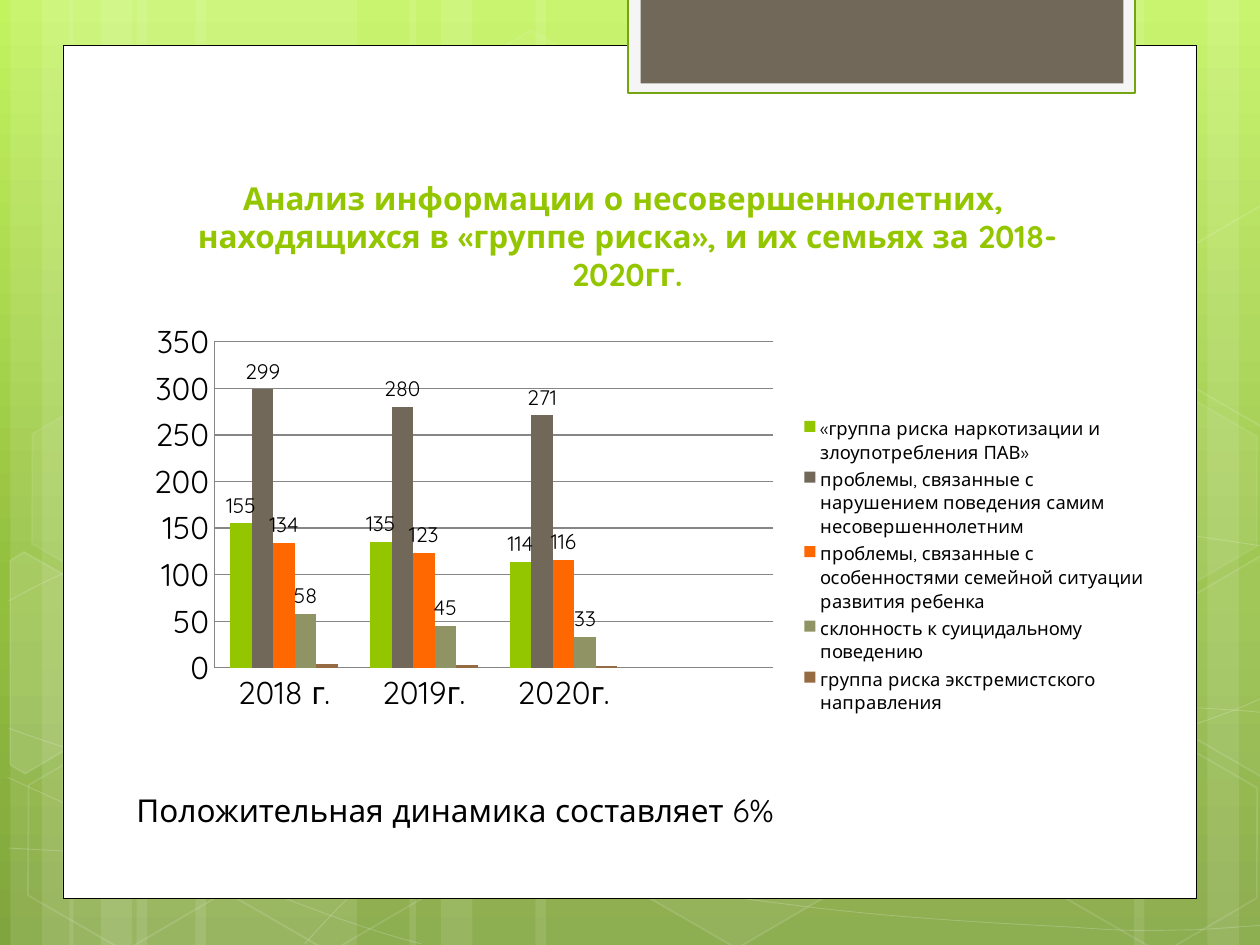
from copy import deepcopy

from lxml import etree
from pptx import Presentation
from pptx.chart.data import CategoryChartData
from pptx.dml.color import RGBColor
from pptx.enum.chart import XL_CHART_TYPE, XL_LABEL_POSITION, XL_LEGEND_POSITION, XL_TICK_MARK
from pptx.enum.shapes import MSO_SHAPE
from pptx.enum.text import MSO_ANCHOR, MSO_AUTO_SIZE, PP_ALIGN
from pptx.oxml import parse_xml
from pptx.oxml.ns import nsdecls, qn
from pptx.util import Pt

RECT, HEXAGON = MSO_SHAPE.RECTANGLE, MSO_SHAPE.HEXAGON
CLUSTERED = XL_CHART_TYPE.COLUMN_CLUSTERED
ABOVE_BAR = XL_LABEL_POSITION.OUTSIDE_END
LEGEND_RIGHT = XL_LEGEND_POSITION.RIGHT
NO_TICK = XL_TICK_MARK.NONE
BOTTOM, TOP = MSO_ANCHOR.BOTTOM, MSO_ANCHOR.TOP
GROW = MSO_AUTO_SIZE.SHAPE_TO_FIT_TEXT
CENTER, LEFT = PP_ALIGN.CENTER, PP_ALIGN.LEFT

COLORS = {
    "white": "FFFFFF", "black": "000000", "lime": "94C600", "taupe": "71685A",
    "orange": "FF6700", "olive": "909465", "brown": "956B43", "grid": "868686",
    "tab": "F5F5F5", "tab_edge": "74A510",
    "bg_top": "C3F35F", "bg_middle": "93BF3F", "bg_bottom": "81A53E",
}

STRIPES = [
    (78, 126), (6, 36), (24, 60), (111.6, 126), (39.6, 36), (57.6, 60),
    (528, 126), (690, 36), (648, 60), (306, 222), (234, 36), (252, 60),
]
WAVES = [
    [(5, 484.6), (43.9, 486.7), (82.8, 488.9), (136.8, 488.2), (190.8, 487.4),
     (257.8, 486), (329.8, 478.8), (401.8, 471.6), (504, 457.9), (570.2, 444.2),
     (635.8, 430.6), (703.4, 409), (725, 396.7)],
    [(5, 343.4), (25.9, 331.9), (46.8, 321.1), (87.1, 310.3), (128.2, 299.5),
     (186.5, 283.7), (249.8, 278.6), (313.9, 273.6), (391.7, 272.9), (470.9, 278.6),
     (550.1, 284.4), (681.8, 306.7), (725, 312.5)],
    [(4.3, 444.2), (91.4, 483.8), (177.8, 523.4), (240.5, 539.3)],
    [(5, 416.2), (27.4, 424.1), (50.4, 432), (92.2, 443.5), (133.9, 454.3),
     (196.6, 472.3), (257, 484.6), (316.8, 496.8), (392.4, 509.8), (452.2, 517),
     (511.9, 524.9), (576, 527.8), (614.2, 529.9), (651.6, 532.8), (661.7, 531.4),
     (680.4, 531.4), (699.1, 530.6), (712.1, 529.2), (725, 528.5)],
    [(174.2, 539.3), (187.2, 524.9), (200.2, 510.5), (217.4, 497.5), (234.7, 484.6),
     (259.2, 470.2), (279.4, 460.1), (299.5, 450), (311.8, 445.7), (338.4, 438.5),
     (364.3, 431.3), (412.6, 421.2), (437.8, 416.2), (463.7, 411.1), (467.3, 411.1),
     (489.6, 409.7), (511.9, 407.5), (547.2, 405.4), (571.7, 404.6), (596.9, 403.9),
     (637.9, 404.6), (637.9, 404.6), (654, 404.6), (670, 404.6), (686.2, 404.6),
     (699.1, 405.4), (711.4, 406.1), (717.8, 406.8), (724.3, 407.5), (722.2, 406.8),
     (724.3, 407.5)],
]
HEXAGONS = [
    (240.5, 25.9, 4, 8), (357.8, 424.1, 6, 12), (7.9, 425.5, 0, 12), (10.1, 224.6, 7, 8),
    (125.3, 426.2, 0, 12), (542.2, 326.2, 10, 12), (600.5, 427, 0, 12), (600.5, 226.1, 7, 8),
]
CUT_HEXAGONS = [
    ([(5.8, 320.4), (13.7, 315.4), (69.1, 347), (68.4, 410.4), (14.4, 442.1), (5.8, 437)], 10),
    ([(666.7, 349.2), (720.7, 317.5), (726.5, 321.1), (726.5, 441.4), (721.4, 444.2),
      (666.7, 412.6)], 4),
    ([(666.7, 149), (720.7, 117.4), (727.2, 121), (726.5, 241.2), (721.4, 244.1),
      (666.7, 212.4)], 0),
]
YEARS = ["2018 г.", "2019г.", "2020г.", ""]
RISK_GROUPS = [
    ("«группа риска наркотизации и злоупотребления ПАВ»", [155, 135, 114, None], "lime"),
    ("проблемы, связанные с нарушением поведения самим несовершеннолетним",
     [299, 280, 271, None], "taupe"),
    ("проблемы, связанные с особенностями семейной ситуации развития ребенка",
     [134, 123, 116, None], "orange"),
    ("склонность к суицидальному поведению", [58, 45, 33, None], "olive"),
    ("группа риска экстремистского направления", [4, 3, 2, None], "brown"),
]


def rgb(name):
    return RGBColor.from_string(COLORS[name])


def apply(target, values):
    for name, value in values.items():
        setattr(target, name, value)


def bend(path):
    segments = path.findall(qn("a:lnTo"))
    for first in range(0, len(segments), 3):
        curve = etree.SubElement(path, qn("a:cubicBezTo"))
        for segment in segments[first:first + 3]:
            curve.append(segment[0])
            path.remove(segment)


def place(element, x, y, w, h, inner=False):
    target = '<c:layoutTarget val="inner"/>' if inner else ""
    modes = "".join(f'<c:{m}Mode val="edge"/>' for m in "xy")
    sizes = "".join(f'<c:{n} val="{v}"/>' for n, v in zip("xywh", (x, y, w, h)))
    layout = parse_xml(f'<c:layout {nsdecls("c")}><c:manualLayout>{target}{modes}{sizes}'
                       "</c:manualLayout></c:layout>")
    for old in element.findall(qn("c:layout")):
        element.remove(old)
    position = element.find(qn("c:legendPos"))
    element.insert(0 if position is None else 1, layout)


class SlideBuilder:
    font = "Quicksand"
    size = 18

    def __init__(self, slide):
        self.slide = slide
        self.shapes = slide.shapes

    def background(self, stops):
        fill = self.slide.background.fill
        fill.gradient()
        fill.gradient_angle = 270
        first = fill.gradient_stops[0]._gs
        first.addnext(deepcopy(first))
        for stop, (color, position) in zip(fill.gradient_stops, stops):
            stop.color.rgb = rgb(color)
            stop.position = position

    def paint(self, shape, fill=None, line=None, width=1, fill_alpha=100, line_alpha=100):
        shape.shadow.inherit = False
        for part, color, alpha, path in (
                (shape.fill, fill, fill_alpha, "./p:spPr/a:solidFill/a:srgbClr"),
                (shape.line.fill, line, line_alpha, "./p:spPr/a:ln/a:solidFill/a:srgbClr")):
            if not color or not alpha:
                part.background()
                continue
            part.solid()
            part.fore_color.rgb = rgb(color)
            if alpha < 100:
                node = shape._element.xpath(path)[0]
                etree.SubElement(node, qn("a:alpha")).set("val", str(alpha * 1000))
        if line:
            shape.line.width = Pt(width)

    def preset(self, kind, box, rotation=0, **paint):
        shape = self.shapes.add_shape(kind, *map(Pt, box))
        shape.rotation = rotation
        if kind == HEXAGON:
            shape.adjustments[0] = 0.285
        self.paint(shape, **paint)

    def outline(self, points, curved=False, **paint):
        start, *rest = [(Pt(x), Pt(y)) for x, y in points]
        builder = self.shapes.build_freeform(*start)
        builder.add_line_segments(rest, close=not curved)
        shape = builder.convert_to_shape()
        if curved:
            bend(shape._element.xpath(".//a:path")[0])
        self.paint(shape, **paint)

    def text(self, box, words, color="black", bold=False, frame=None, paragraph=None):
        text_frame = self.shapes.add_textbox(*map(Pt, box)).text_frame
        apply(text_frame, frame or {})
        line = text_frame.paragraphs[0]
        line.text = words
        apply(line, paragraph or {})
        for run in line.runs:
            apply(run.font, {"name": self.font, "size": Pt(self.size), "bold": bold})
            run.font.color.rgb = rgb(color)

    def column_chart(self, box, categories, groups):
        data = CategoryChartData()
        data.categories = categories
        for name, values, _ in groups:
            data.add_series(name, values)
        chart = self.shapes.add_chart(CLUSTERED, *map(Pt, box), data).chart
        apply(chart, {"has_title": False, "has_legend": True})
        apply(chart.font, {"name": self.font, "size": Pt(self.size)})
        chart.font.color.rgb = rgb("black")
        apply(chart.legend, {"position": LEGEND_RIGHT, "include_in_layout": False})
        apply(chart.legend.font, {"name": self.font, "size": Pt(10.5)})
        apply(chart.value_axis, {"minimum_scale": 0, "maximum_scale": 350, "major_unit": 50})
        for axis in (chart.category_axis, chart.value_axis):
            apply(axis, {"major_tick_mark": NO_TICK, "minor_tick_mark": NO_TICK})
        for ruled in (chart.category_axis, chart.value_axis, chart.value_axis.major_gridlines):
            ruled.format.line.color.rgb = rgb("grid")
            ruled.format.line.width = Pt(0.75)
        plot = chart.plots[0]
        apply(plot, {"gap_width": 150, "vary_by_categories": False})
        for series, (_, _, color) in zip(plot.series, groups):
            series.format.fill.solid()
            series.format.fill.fore_color.rgb = rgb(color)
            if color != "brown":
                apply(series.data_labels, {"show_value": True, "position": ABOVE_BAR})
                apply(series.data_labels.font, {"name": self.font, "size": Pt(12)})
        place(chart._chartSpace.chart.plotArea, 0.079, 0.069, 0.547, 0.801, inner=True)
        place(chart.legend._element, 0.663, 0.245, 0.337, 0.75)


def main():
    deck = Presentation()
    apply(deck, {"slide_width": Pt(720), "slide_height": Pt(540)})
    page = SlideBuilder(deck.slides.add_slide(deck.slide_layouts[6]))
    page.background([("bg_top", 0), ("bg_middle", 0.62), ("bg_bottom", 1)])
    for left, width in STRIPES:
        page.preset(RECT, (left, 0, width, 540), fill="white", fill_alpha=10)
    for knots in WAVES:
        page.outline(knots, curved=True, line="white", width=0.5, line_alpha=20)
    for left, top, inside, edge in HEXAGONS:
        page.preset(HEXAGON, (left, top, 126, 109.4), 30, fill="white", line="white",
                    fill_alpha=inside, line_alpha=edge)
    for corners, inside in CUT_HEXAGONS:
        page.outline(corners, fill="white", line="white", fill_alpha=inside, line_alpha=12)
    page.preset(RECT, (36, 26, 648, 487.2), fill="white", line="black", width=0.5)
    page.preset(RECT, (359, -1.4, 289.6, 54.7), fill="tab", line="tab_edge", width=1.25)
    page.preset(RECT, (366, -1.4, 276, 49), fill="taupe")
    page.text((82.1, 31.7, 553, 139), "Анализ информации о несовершеннолетних, \v"
              "находящихся в «группе риска», и их семьях за 2018-2020гг.", "lime", True,
              {"word_wrap": True, "vertical_anchor": BOTTOM},
              {"alignment": CENTER, "line_spacing": 1.0})
    page.column_chart((76.3, 179.3, 583.9, 232.6), YEARS, RISK_GROUPS)
    page.text((70.8, 448.6, 393, 29), "Положительная динамика составляет 6%",
              frame={"word_wrap": False, "auto_size": GROW, "vertical_anchor": TOP},
              paragraph={"alignment": LEFT})
    deck.save("out.pptx")


if __name__ == "__main__":
    main()
